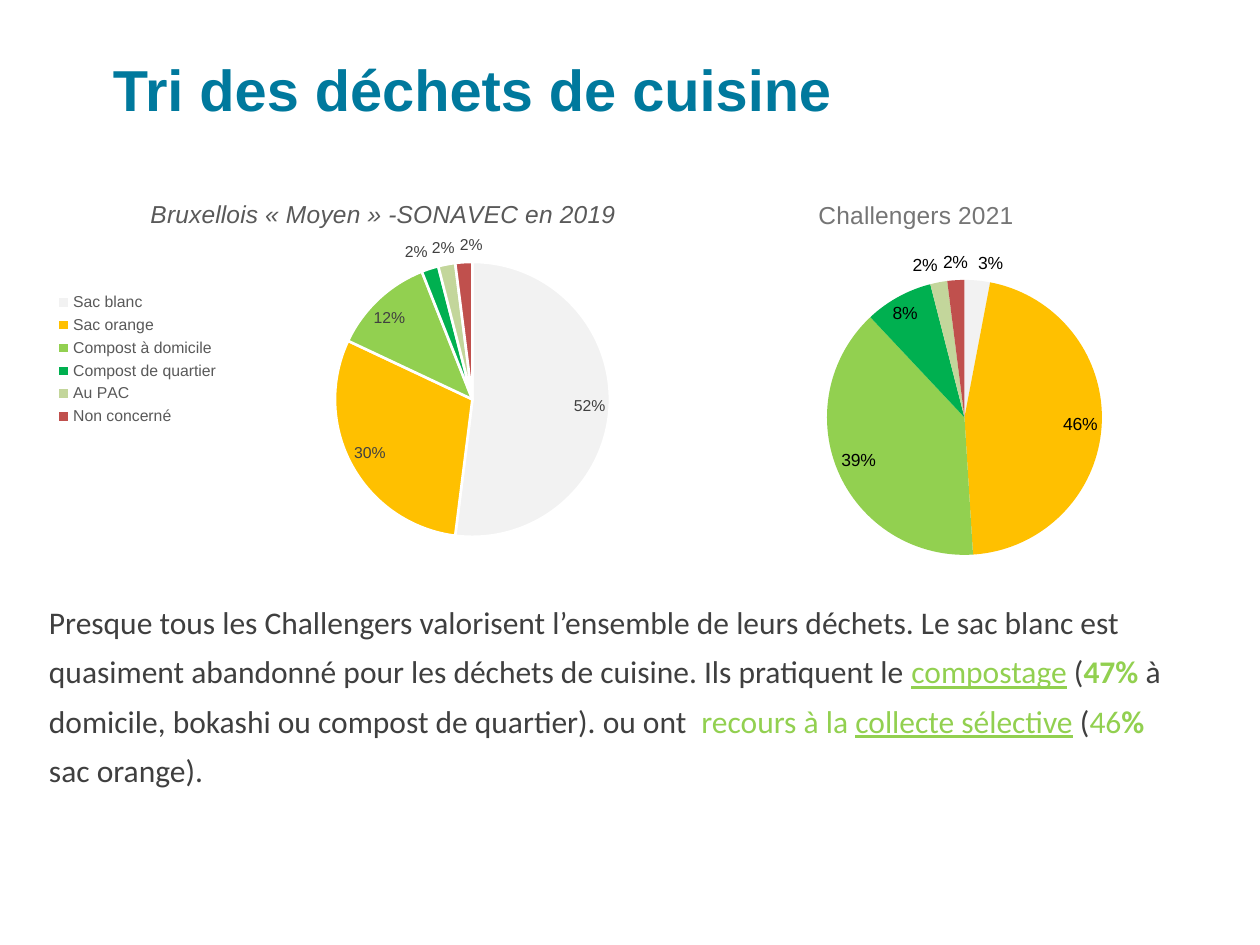
"""Build a slide that compares kitchen waste sorting in two pie charts."""

from dataclasses import dataclass
from typing import Optional

import lxml.etree
import pptx
import pptx.chart.data
import pptx.dml.color
import pptx.enum.chart
import pptx.enum.text
import pptx.oxml.ns
import pptx.util

EMU_PER_PX = 914400 / 126


@dataclass(frozen=True)
class Theme:
    heading_font: str = "Arial"
    body_font: str = "Calibri"
    heading: str = "00799D"
    body: str = "3F3F3F"
    accent: str = "92D050"
    white: str = "FFFFFF"
    legend: str = "595959"
    slices: tuple[str, ...] = ("F2F2F2", "FFC000", "92D050", "00B050", "C3D69B", "C0504D")
    heading_size: int = 33
    body_size: int = 18
    chart_title_size: int = 14
    legend_size: int = 9
    line_spacing: float = 1.3


@dataclass(frozen=True)
class Box:
    left: int
    top: int
    width: int
    height: int

    def emu(self) -> tuple[int, ...]:
        return tuple(round(value * EMU_PER_PX)
                     for value in (self.left, self.top, self.width, self.height))


@dataclass(frozen=True)
class Pie:
    title: str
    title_color: str
    title_italic: bool
    box: Box
    title_box: Box
    plot_box: Box
    categories: tuple[str, ...]
    values: tuple[float, ...]
    label_size: int
    label_color: str
    show_percentage: bool
    border: Optional[str] = None
    legend_box: Optional[Box] = None


@dataclass(frozen=True)
class Phrase:
    text: str
    color: str
    bold: bool = False
    underline: bool = False


THEME = Theme()
INSET = 9

PIES = (
    Pie("Bruxellois «\u00a0Moyen\u00a0» -SONAVEC en 2019", THEME.legend, True,
        Box(40, 164, 672, 392), Box(146, 194, 472, 30), Box(335, 262, 275, 275),
        ("Sac blanc", "Sac orange", "Compost à domicile", "Compost de quartier",
         "Au PAC", "Non concerné"),
        (0.52, 0.3, 0.12, 0.02, 0.02, 0.02), 9, "404040", False,
        border=THEME.white, legend_box=Box(50, 289, 175, 141)),
    Pie("Challengers 2021", "757575", False,
        Box(712, 179, 505, 393), Box(814, 195, 195, 30), Box(827, 280, 275, 275),
        ("1", "2", "3", "4", "5", "6"),
        (3, 46, 39, 8, 2, 2), 10, "000000", True),
)

BODY = (
    Phrase("Presque tous les Challengers valorisent l’ensemble de leurs déchets. "
           "Le sac blanc est quasiment abandonné pour les déchets de cuisine. "
           "Ils pratiquent le ", THEME.body),
    Phrase("compostage", THEME.accent, underline=True),
    Phrase(" (", THEME.body),
    Phrase("47% ", THEME.accent, bold=True),
    Phrase("à domicile, bokashi ou compost de quartier). ou ont  ", THEME.body),
    Phrase("recours à la ", THEME.accent),
    Phrase("collecte sélective", THEME.accent, underline=True),
    Phrase(" (", THEME.body),
    Phrase("46", THEME.accent),
    Phrase("% ", THEME.accent, bold=True),
    Phrase("sac orange).", THEME.body),
)


def rgb(color: str) -> pptx.dml.color.RGBColor:
    return pptx.dml.color.RGBColor.from_string(color)


def style_font(font, name: str, size: int, color: str, bold: bool = False,
               italic: bool = False) -> None:
    font.name = name
    font.size = pptx.util.Pt(size)
    font.bold = bold
    font.italic = italic
    font.color.rgb = rgb(color)


def add_paragraph_box(slide, box: Box, anchor):
    text_frame = slide.shapes.add_textbox(*box.emu()).text_frame
    text_frame.word_wrap = True
    text_frame.vertical_anchor = anchor
    inset = round(INSET * EMU_PER_PX)
    text_frame.margin_left = text_frame.margin_right = inset
    text_frame.margin_top = text_frame.margin_bottom = inset
    return text_frame.paragraphs[0]


def place_part(element, index: int, part: Box, chart_box: Box,
               inner: bool = False, sized: bool = True) -> None:
    qn = pptx.oxml.ns.qn
    for existing in element.findall(qn("c:layout")):
        element.remove(existing)
    layout = lxml.etree.Element(qn("c:layout"))
    manual = lxml.etree.SubElement(layout, qn("c:manualLayout"))
    settings = [("layoutTarget", "inner")] if inner else []
    settings += [("xMode", "edge"), ("yMode", "edge"),
                 ("x", (part.left - chart_box.left) / chart_box.width),
                 ("y", (part.top - chart_box.top) / chart_box.height)]
    if sized:
        settings += [("w", part.width / chart_box.width),
                     ("h", part.height / chart_box.height)]
    for tag, value in settings:
        lxml.etree.SubElement(manual, qn(f"c:{tag}")).set("val", str(value))
    element.insert(index, layout)


def add_pie(slide, pie: Pie) -> None:
    data = pptx.chart.data.CategoryChartData()
    data.categories = pie.categories
    data.add_series("Series 1", pie.values)
    chart = slide.shapes.add_chart(
        pptx.enum.chart.XL_CHART_TYPE.PIE, *pie.box.emu(), data).chart
    style_font(chart.font, THEME.heading_font, pie.label_size, pie.label_color)

    chart.has_title = True
    paragraph = chart.chart_title.text_frame.paragraphs[0]
    paragraph.text = pie.title
    style_font(paragraph.font, THEME.heading_font, THEME.chart_title_size,
               pie.title_color, italic=pie.title_italic)
    title = chart.element.find(".//" + pptx.oxml.ns.qn("c:title"))
    place_part(title, 1, pie.title_box, pie.box, sized=False)
    plot_area = chart.element.find(".//" + pptx.oxml.ns.qn("c:plotArea"))
    place_part(plot_area, 0, pie.plot_box, pie.box, inner=True)

    chart.has_legend = pie.legend_box is not None
    if pie.legend_box:
        chart.legend.position = pptx.enum.chart.XL_LEGEND_POSITION.LEFT
        chart.legend.include_in_layout = False
        style_font(chart.legend.font, THEME.heading_font, THEME.legend_size, THEME.legend)
        legend = chart.element.find(".//" + pptx.oxml.ns.qn("c:legend"))
        place_part(legend, 1, pie.legend_box, pie.box)

    plot = chart.plots[0]
    plot.vary_by_categories = True
    for index, color in enumerate(THEME.slices):
        point = plot.series[0].points[index]
        point.format.fill.solid()
        point.format.fill.fore_color.rgb = rgb(color)
        if pie.border:
            point.format.line.color.rgb = rgb(pie.border)
            point.format.line.width = pptx.util.Pt(1.5)
        else:
            point.format.line.fill.background()

    plot.has_data_labels = True
    labels = plot.data_labels
    labels.show_value = not pie.show_percentage
    labels.show_percentage = pie.show_percentage
    labels.number_format = "0%"
    labels.number_format_is_linked = False
    labels.position = pptx.enum.chart.XL_LABEL_POSITION.BEST_FIT
    style_font(labels.font, THEME.heading_font, pie.label_size, pie.label_color)


def add_heading(slide) -> None:
    paragraph = add_paragraph_box(slide, Box(104, 40, 1134, 96), pptx.enum.text.MSO_ANCHOR.MIDDLE)
    paragraph.text = "Tri des déchets de cuisine"
    style_font(paragraph.font, THEME.heading_font, THEME.heading_size, THEME.heading, bold=True)


def add_body(slide) -> None:
    paragraph = add_paragraph_box(slide, Box(40, 583, 1150, 297), pptx.enum.text.MSO_ANCHOR.TOP)
    paragraph.line_spacing = THEME.line_spacing
    for phrase in BODY:
        run = paragraph.add_run()
        run.text = phrase.text
        style_font(run.font, THEME.body_font, THEME.body_size, phrase.color, phrase.bold)
        run.font.underline = phrase.underline


def main() -> None:
    presentation = pptx.Presentation()
    presentation.slide_width = round(1260 * EMU_PER_PX)
    presentation.slide_height = round(945 * EMU_PER_PX)
    slide = presentation.slides.add_slide(presentation.slide_layouts[6])
    add_heading(slide)
    for pie in PIES:
        add_pie(slide, pie)
    add_body(slide)
    presentation.save("out.pptx")


if __name__ == "__main__":
    main()
